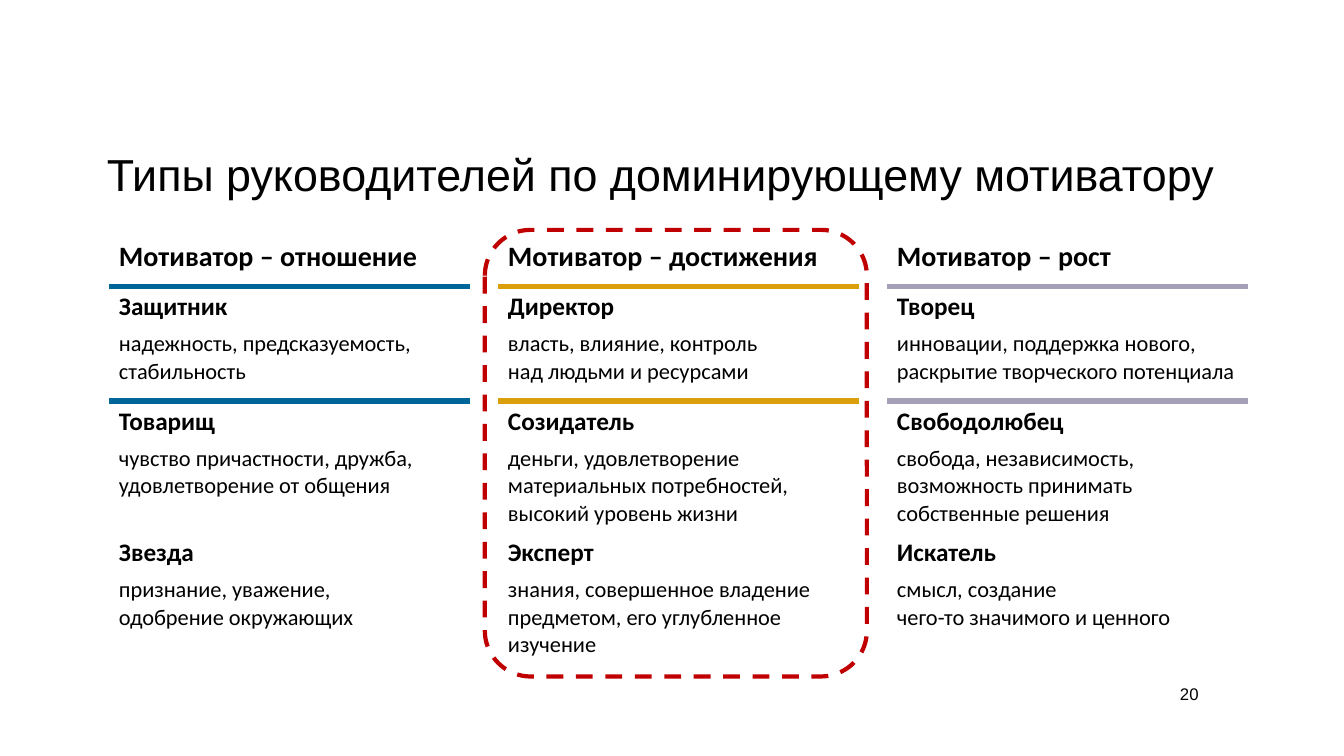
import pptx
import pptx.dml.color
import pptx.enum.dml
import pptx.enum.shapes
import pptx.enum.text
import pptx.oxml
import pptx.oxml.ns
import pptx.util

Pt = pptx.util.Pt
ANCHOR = pptx.enum.text.MSO_ANCHOR
ALIGN = pptx.enum.text.PP_ALIGN

COLORS = {
    "text": "000000",
    "relation": "006699",
    "achievement": "DC9F0C",
    "growth": "A5A0B6",
    "highlight": "C00000",
}
NO_STYLE = "{2D5ABB26-0587-4C30-8999-92F81FD0307C}"
COL_W, GAP_W = 257.75, 20.16
ROW_HEIGHTS = [42.5, 82, 93.6, 93.6]
MOTIVATORS = [
    ("Мотиватор – отношение", "relation", [
        ("Защитник", "надежность, предсказуемость, стабильность"),
        ("Товарищ", "чувство причастности, дружба, удовлетворение от общения"),
        ("Звезда", "признание, уважение,\nодобрение окружающих"),
    ]),
    ("Мотиватор – достижения", "achievement", [
        ("Директор", "власть, влияние, контроль\nнад людьми и ресурсами"),
        ("Созидатель", "деньги, удовлетворение материальных потребностей, высокий уровень жизни"),
        ("Эксперт", "знания, совершенное владение предметом, его углубленное изучение"),
    ]),
    ("Мотиватор – рост", "growth", [
        ("Творец", "инновации, поддержка нового, раскрытие творческого потенциала"),
        ("Свободолюбец", "свобода, независимость, возможность принимать собственные решения"),
        ("Искатель", "смысл, создание\nчего-то значимого и ценного"),
    ]),
]


def rgb(name):
    """Return the named colour."""
    return pptx.dml.color.RGBColor.from_string(COLORS[name])


def add_text(p, text, size, font="Calibri", bold=False):
    """Fill a paragraph with runs, one for each line of the text."""
    for i, line in enumerate(text.split("\n")):
        if i:
            p.add_line_break()
        r = p.add_run()
        r.text = line
        r.font.size = Pt(size)
        r.font.name = font
        r.font.bold = bold
        r.font.color.rgb = rgb("text")


def set_border(cell, side, color):
    """Draw a thick border on one side of a cell."""
    ln = pptx.oxml.parse_xml(
        f'<a:{side} {pptx.oxml.ns.nsdecls("a")} w="{Pt(4.5)}"><a:solidFill>'
        f'<a:srgbClr val="{COLORS[color]}"/></a:solidFill></a:{side}>')
    cell._tc.get_or_add_tcPr().insert(0, ln)


def add_title(s, text):
    """Place the slide title."""
    sp = s.shapes.title
    sp.left, sp.top, sp.width, sp.height = Pt(69.1), Pt(97.9), Pt(813.6), Pt(52.6)
    tf = sp.text_frame
    tf.auto_size = pptx.enum.text.MSO_AUTO_SIZE.NONE
    tf.vertical_anchor = ANCHOR.MIDDLE
    p = tf.paragraphs[0]
    p.alignment = ALIGN.LEFT
    add_text(p, text, 32, "Arial")


def add_page_number(s, number):
    """Place the page number at the lower right."""
    tf = s.shapes.add_textbox(Pt(759.6), Pt(485.3), Pt(103.7), Pt(20.9)).text_frame
    tf.word_wrap = True
    tf.vertical_anchor = ANCHOR.BOTTOM
    p = tf.paragraphs[0]
    p.alignment = ALIGN.RIGHT
    add_text(p, number, 12, "Arial")


def add_motivator_table(s):
    """Build the table of motivators with narrow gap columns between them."""
    widths = [COL_W, GAP_W, COL_W, GAP_W, COL_W]
    frame = s.shapes.add_table(len(ROW_HEIGHTS), len(widths), Pt(77.76), Pt(162),
                               Pt(sum(widths)), Pt(sum(ROW_HEIGHTS)))
    table = frame.table
    table._tbl.tblPr.find(pptx.oxml.ns.qn("a:tableStyleId")).text = NO_STYLE
    table.first_row = table.horz_banding = False
    for col, width in zip(table.columns, widths):
        col.width = Pt(width)
    for row, height in zip(table.rows, ROW_HEIGHTS):
        row.height = Pt(height)
    for cell in table.iter_cells():
        cell.fill.background()
    for i, (heading, color, leaders) in enumerate(MOTIVATORS):
        head = table.cell(0, 2 * i)
        head.vertical_anchor = ANCHOR.MIDDLE
        add_text(head.text_frame.paragraphs[0], heading, 20, bold=True)
        set_border(head, "lnB", color)
        set_border(table.cell(1, 2 * i), "lnT", color)
        for j, (leader, values) in enumerate(leaders, 1):
            tf = table.cell(j, 2 * i).text_frame
            add_text(tf.paragraphs[0], leader, 18, bold=True)
            p = tf.add_paragraph()
            p.space_before = Pt(6)
            add_text(p, values, 16)


def add_highlight(s):
    """Frame the middle column with a dashed rounded rectangle."""
    sp = s.shapes.add_shape(pptx.enum.shapes.MSO_SHAPE.ROUNDED_RECTANGLE,
                            Pt(349.2 - 2.9), Pt(164.2), Pt(272.9), Pt(319))
    sp.adjustments[0] = 0.12
    sp.shadow.inherit = False
    sp.fill.background()
    sp.line.color.rgb = rgb("highlight")
    sp.line.width = Pt(3)
    sp.line.dash_style = pptx.enum.dml.MSO_LINE.DASH


def main():
    """Build the slide and save it."""
    prs = pptx.Presentation()
    prs.slide_width, prs.slide_height = Pt(960), Pt(540)
    s = prs.slides.add_slide(prs.slide_layouts[5])
    add_title(s, "Типы руководителей по доминирующему мотиватору")
    add_page_number(s, "20")
    add_motivator_table(s)
    add_highlight(s)
    prs.save("out.pptx")


if __name__ == "__main__":
    main()
